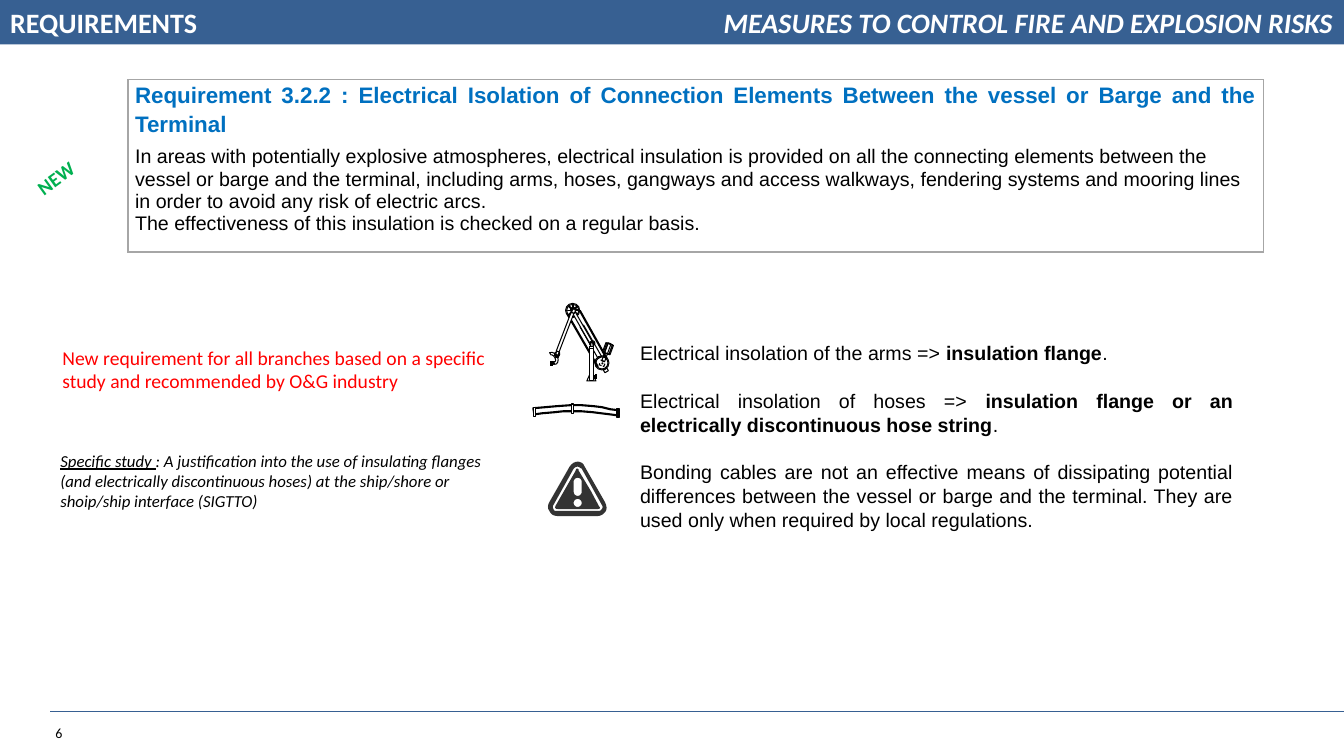
import math
from typing import Any, NamedTuple

import pptx
import pptx.dml.color
import pptx.enum.dml
import pptx.enum.shapes
import pptx.enum.text
import pptx.oxml.ns
import pptx.util
from lxml import etree

RGB = pptx.dml.color.RGBColor
KIND = pptx.enum.shapes.MSO_SHAPE
ALIGN = pptx.enum.text.PP_ALIGN
ANCHOR = pptx.enum.text.MSO_ANCHOR
Pt = pptx.util.Pt
qn = pptx.oxml.ns.qn

NAVY = RGB(0x37, 0x60, 0x92)
BLUE = RGB(0x00, 0x70, 0xC0)
GREEN = RGB(0x00, 0xB0, 0x50)
RED = RGB(0xFF, 0x00, 0x00)
GREY = RGB(0xA6, 0xA6, 0xA6)
DARK = RGB(0x33, 0x33, 0x33)
BLACK = RGB(0, 0, 0)
WHITE = RGB(0xFF, 0xFF, 0xFF)
SCALE = 9144  # EMU per px, 100 px to the inch

BOX, DISC, CAP = KIND.RECTANGLE, KIND.OVAL, KIND.FLOWCHART_DELAY


class Run(NamedTuple):
    text: str
    bold: bool = False
    under: bool = False


class Part(NamedTuple):
    kind: Any
    x: int
    y: int
    w: int
    h: int
    turn: float = 0
    fill: RGB | None = None
    line: RGB | None = BLACK
    width: float = 0.75


class Rod(NamedTuple):
    x1: int
    y1: int
    x2: int
    y2: int
    color: RGB = BLACK
    width: float = 1.5


def px(*nums: float) -> list[int]:
    return [round(n * SCALE) for n in nums]


def write(frame: Any, *paras: list[Run], size: int, color: RGB = BLACK,
          font: str = "Calibri", bold: bool = False, italic: bool = False,
          align: Any = ALIGN.LEFT, lead: Any = None, gap: float = 0) -> None:
    """Fill a text frame; gap is the space in points before each later paragraph."""
    for i, runs in enumerate(paras):
        para = frame.add_paragraph() if i else frame.paragraphs[0]
        para.alignment = align
        if lead:
            para.line_spacing = lead
        para.space_before = Pt(gap if i else 0)
        for item in runs:
            run = para.add_run()
            run.text = item.text
            face = run.font
            face.name, face.size, face.color.rgb = font, Pt(size), color
            face.bold, face.italic = bold or item.bold, italic
            face.underline = item.under


def label(shapes: Any, spot: tuple, *paras: list[Run], anchor: Any = ANCHOR.TOP,
          wrap: bool = True, turn: float = 0, **form: Any) -> None:
    box = shapes.add_textbox(*px(*spot))
    box.rotation = turn
    box.text_frame.word_wrap = wrap
    box.text_frame.vertical_anchor = anchor
    write(box.text_frame, *paras, **form)


def paint(shape: Any, fill: RGB | None, line: RGB | None, width: float) -> None:
    shape.shadow.inherit = False
    if fill is None:
        shape.fill.background()
    else:
        shape.fill.solid()
        shape.fill.fore_color.rgb = fill
    if line is None:
        shape.line.fill.background()
    else:
        shape.line.color.rgb, shape.line.width = line, Pt(width)


def draw(shapes: Any, part: Part | Rod) -> Any:
    if isinstance(part, Rod):
        rod = shapes.add_connector(pptx.enum.shapes.MSO_CONNECTOR.STRAIGHT, *px(*part[:4]))
        rod.line.color.rgb, rod.line.width = part.color, Pt(part.width)
        etree.SubElement(rod.element.spPr, qn("a:effectLst"))
        return rod
    shape = shapes.add_shape(part.kind, *px(part.x, part.y, part.w, part.h))
    shape.rotation = part.turn
    paint(shape, part.fill, part.line, part.width)
    return shape


def trace(shapes: Any, *rings: list, fill: RGB | None = None,
          line: RGB | None = None, width: float = 1) -> None:
    """Draw closed rings as one freeform."""
    pen = None
    for ring in rings:
        first, *rest = [px(*p) for p in ring]
        if pen is None:
            pen = shapes.build_freeform(*first, scale=1.0)
        else:
            pen.move_to(*first)
        pen.add_line_segments(rest, close=True)
    paint(pen.convert_to_shape(), fill, line, width)


def bend(*steps: tuple) -> list:
    """Turn points and (x1, y1, x2, y2, x, y) cubic curves into a list of points."""
    out = [steps[0]]
    for step in steps[1:]:
        if len(step) == 2:
            out.append(step)
            continue
        ends = [out[-1], step[:2], step[2:4], step[4:]]
        for t in (0.25, 0.5, 0.75, 1):
            mix = [math.comb(3, k) * t**k * (1 - t)**(3 - k) for k in range(4)]
            out.append(tuple(sum(m * e[i] for m, e in zip(mix, ends)) for i in (0, 1)))
    return out


def pill(x: int, top: int, low: int, rad: int) -> list:
    """Outline of a stadium whose round ends are centred at top and low."""
    turns = [math.tau * k / 24 for k in range(24)]
    return [(x + rad * math.cos(a), (low if a < math.pi else top) + rad * math.sin(a))
            for a in turns]


def edge(cell: Any, sides: str) -> None:
    """Draw the named sides of a cell (of L, R, T, B) and hide the others."""
    props = cell._tc.get_or_add_tcPr()
    for i, side in enumerate("LRTB"):
        line = etree.Element(qn(f"a:ln{side}"), w=str(Pt(1)))
        if side in sides:
            fill = etree.SubElement(line, qn("a:solidFill"))
            etree.SubElement(fill, qn("a:srgbClr"), val=str(GREY))
        else:
            etree.SubElement(line, qn("a:noFill"))
        props.insert(i, line)


SPOKES = [Part(BOX, 568 + round(4 * math.sin(math.radians(a))),
               306 - round(4 * math.cos(math.radians(a))), 1, 4, a) for a in range(0, 360, 45)]
BOLTS = [Part(DISC, x, y, 1, 1) for x, y in (
    (568, 306), (569, 306), (570, 307), (567, 306), (566, 307), (570, 308),
    (554, 350), (554, 351), (553, 352), (552, 353), (551, 352), (550, 352), (550, 351),
    (585, 341), (585, 340), (585, 339), (586, 339), (587, 339), (588, 340), (588, 341))]
WHEELS = [Part(DISC, x, y, d, d) for x, y, d in (
    (561, 301, 14), (562, 302, 12), (566, 305, 5), (590, 353, 14), (591, 354, 12),
    (585, 338, 5), (550, 349, 5), (597, 360, 1))]
ARM = [
    Rod(563, 312, 593, 364), Part(BOX, 568, 337, 36, 4, 240.2, WHITE),
    Part(KIND.ISOSCELES_TRIANGLE, 582, 368, 9, 10), *WHEELS, *SPOKES,
    Part(CAP, 551, 349, 4, 3, 108.5, WHITE), Part(BOX, 558, 323, 39, 3, 240.2, WHITE),
    Part(CAP, 585, 340, 4, 3, 270, WHITE), Part(BOX, 585, 344, 4, 2, 0, WHITE),
    Part(BOX, 585, 346, 4, 32, 0, WHITE), Part(BOX, 600, 340, 3, 19, 20),
    Part(BOX, 599, 341, 8, 10, 20), Part(BOX, 600, 341, 6, 10, 20),
    Part(BOX, 601, 341, 5, 10, 20), Part(BOX, 599, 366, 4, 3, 329.9),
    Rod(575, 308, 602, 356), Part(BOX, 551, 354, 3, 1),
    Part(BOX, 547, 360, 3, 1, 270), Part(BOX, 546, 360, 3, 1, 270),
    Rod(547, 358, 547, 363), *BOLTS,
    Part(BOX, 588, 373, 3, 1, 270, WHITE), Part(BOX, 589, 373, 3, 1, 270, WHITE),
    Rod(591, 371, 591, 376), Part(CAP, 567, 307, 4, 3, 291, WHITE),
    Part(BOX, 540, 328, 41, 3, 291, WHITE)]
HOSE = [(529, 405), (541, 404), (552, 403), (566, 402), (577, 402), (589, 403), (597, 404),
        (605, 406), (613, 407), (612, 412), (604, 411), (596, 410), (588, 409), (576, 408),
        (568, 408), (559, 408), (550, 409), (538, 410), (531, 411), (530, 411)]
SIGN = [
    bend((592, 484), (580, 463), (579, 460, 576, 458, 573, 458), (570, 458, 567, 460, 565, 463),
         (545, 498), (543, 501, 543, 505, 545, 507), (546, 510, 549, 512, 553, 512),
         (593, 512), (596, 512, 599, 510, 601, 507), (602, 505, 602, 502, 600, 498)),
    bend((597, 505), (596, 507, 594, 507, 593, 507), (553, 507), (551, 507, 549, 507, 549, 505),
         (548, 504, 548, 502, 549, 501), (569, 465), (570, 464, 571, 463, 573, 463),
         (574, 463, 575, 464, 577, 465), (597, 501), (598, 502, 598, 504, 597, 505)),
    bend((586, 487), (574, 467), (574, 465, 573, 465, 573, 465), (572, 465, 571, 465, 571, 467),
         (551, 502), (550, 504, 551, 505, 553, 505), (593, 505), (595, 505, 596, 504, 594, 502)),
    pill(573, 499, 499, 4), pill(573, 478, 488, 4)]


def rule(shapes: Any) -> None:
    """Add the requirement table."""
    table = shapes.add_table(2, 1, *px(127, 79, 1126, 171)).table
    table.first_row = table.horz_banding = False
    for i, (high, sides) in enumerate(((66, "LRT"), (105, "LRB"))):
        table.rows[i].height = px(high)[0]
        cell = table.cell(i, 0)
        cell.margin_left = cell.margin_right = px(7)[0]
        cell.margin_top = cell.margin_bottom = 0
        cell.fill.background()
        edge(cell, sides)
    write(table.cell(0, 0).text_frame, [Run(
        "Requirement 3.2.2 : Electrical Isolation of Connection Elements Between the vessel "
        "or Barge and the Terminal")],
        size=16, font="Arial", color=BLUE, bold=True, align=ALIGN.JUSTIFY, lead=1.15)
    write(table.cell(1, 0).text_frame, [Run(
        "In areas with potentially explosive atmospheres, electrical insulation is provided on "
        "all the connecting elements between the vessel or barge and the terminal, including "
        "arms, hoses, gangways and access walkways, fendering systems and mooring lines in "
        "order to avoid any risk of electric arcs.")],
        [Run("The effectiveness of this insulation is checked on a regular basis.")],
        size=14, font="Arial")


def main() -> None:
    deck = pptx.Presentation()
    deck.slide_width, deck.slide_height = px(1333, 750)
    slide = deck.slides.add_slide(deck.slide_layouts[5])
    shapes, title = slide.shapes, slide.shapes.title

    draw(shapes, Rod(50, 706, 1333, 706, NAVY, 0.75))
    label(shapes, (45, 714, 71, 27), [Run("6")], size=10)
    bar = draw(shapes, Part(BOX, 0, 0, 1333, 44, 0, NAVY, None))
    title.element.addprevious(bar.element)
    title.left, title.top, title.width, title.height = px(0, 0, 690, 44)
    title.text_frame.auto_size = pptx.enum.text.MSO_AUTO_SIZE.NONE
    title.text_frame.vertical_anchor = ANCHOR.MIDDLE
    write(title.text_frame, [Run("REQUIREMENTS")], size=20, color=WHITE, bold=True)
    label(shapes, (576, 0, 756, 44), [Run("MEASURES TO CONTROL FIRE AND EXPLOSION RISKS")],
          size=20, color=WHITE, bold=True, italic=True, align=ALIGN.RIGHT, anchor=ANCHOR.MIDDLE)

    label(shapes, (25, 158, 66, 34), [Run("NEW")], size=14, color=GREEN, bold=True,
          wrap=False, turn=324.1)
    rule(shapes)
    label(shapes, (52, 338, 458, 57), [Run(
        "New requirement for all branches based on a specific study and recommended by "
        "O&G industry")], size=14, color=RED)
    label(shapes, (50, 442, 463, 71), [Run("Specific study ", under=True), Run(
        ": A justification into the use of insulating flanges (and electrically discontinuous "
        "hoses) at the ship/shore or shoip/ship interface (SIGTTO)")], size=12, italic=True)
    label(shapes, (625, 333, 608, 199),
          [Run("Electrical insolation of the arms => "), Run("insulation flange", True), Run(".")],
          [Run("Electrical insolation of hoses => "),
           Run("insulation flange or an electrically discontinuous hose string", True), Run(".")],
          [Run("Bonding cables are not an effective means of dissipating potential differences "
               "between the vessel or barge and the terminal. They are used only when required "
               "by local regulations.")],
          size=14, font="Arial", align=ALIGN.JUSTIFY, anchor=ANCHOR.MIDDLE, lead=Pt(17), gap=17)

    arm = shapes.add_group_shape().shapes
    for part in ARM:
        draw(arm, part)
    motor = draw(arm, Part(BOX, 595, 358, 5, 5, 20))
    motor.line.dash_style = pptx.enum.dml.MSO_LINE.DASH
    elbow = draw(arm, Part(KIND.BLOCK_ARC, 542, 351, 13, 9, 58.7))
    for i, value in enumerate((108.2, 10.45, 0.29)):
        elbow.adjustments[i] = value
    hose = shapes.add_group_shape().shapes
    trace(hose, HOSE, line=BLACK, width=1.5)
    for x, y in ((567, 401), (612, 405), (529, 404)):
        draw(hose, Part(BOX, x, y, 2, 9, 0, WHITE, BLACK, 1))
    trace(shapes, *SIGN, fill=DARK)
    deck.save("out.pptx")


if __name__ == "__main__":
    main()
